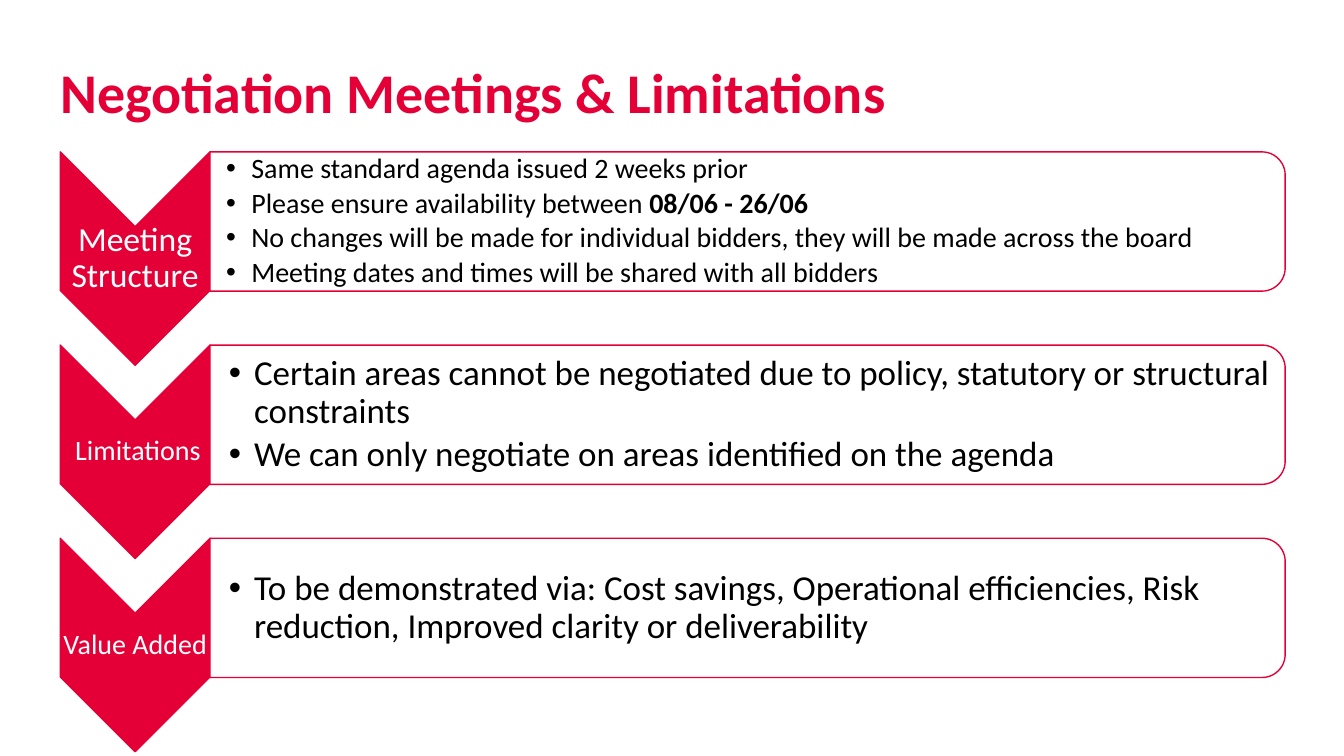
from dataclasses import dataclass

from lxml.etree import SubElement
from pptx import Presentation
from pptx.dml.color import RGBColor as RGB
from pptx.enum.shapes import MSO_SHAPE as SHAPE
from pptx.enum.text import MSO_ANCHOR as ANCHOR, MSO_AUTO_SIZE as AUTO, PP_ALIGN as ALIGN
from pptx.oxml.ns import qn
from pptx.util import Pt

PX = 6350  # EMU per px: the slide is 1920 x 1080 px


@dataclass(frozen=True)
class Theme:
    font: str = "Calibri"
    red: RGB = RGB(0xE4, 0x00, 0x37)
    white: RGB = RGB(0xFF, 0xFF, 0xFF)
    black: RGB = RGB(0, 0, 0)
    title: int = 40
    large: int = 25
    label: int = 24
    small: int = 20


THEME = Theme()

# label, label size, label left inset, list size, list left inset, list items;
# an item is a list of (text, bold) runs
ROWS = [
    ("Meeting Structure", THEME.label, 2, THEME.small, 23, [
        [("Same standard agenda issued 2 weeks prior", False)],
        [("Please ensure availability between ", False), ("08/06 - 26/06", True)],
        [("No changes will be made for individual bidders, "
          "they will be made across the board", False)],
        [("Meeting dates and times will be shared with all bidders", False)],
    ]),
    ("Limitations", THEME.small, 10, THEME.large, 27, [
        [("Certain areas cannot be negotiated due to policy, "
          "statutory or structural constraints", False)],
        [("We can only negotiate on areas identified on the agenda", False)],
    ]),
    ("Value Added", THEME.small, 2, THEME.large, 27, [
        [("To be demonstrated via: Cost savings, Operational efficiencies, "
          "Risk reduction, Improved clarity or deliverability", False)],
    ]),
]


def style_run(r, size, color, bold=False):
    r.font.name = THEME.font
    r.font.size = Pt(size)
    r.font.color.rgb = color
    r.font.bold = bold


def set_frame(tf, anchor, left, other):
    tf.word_wrap = True
    tf.auto_size = AUTO.NONE
    tf.vertical_anchor = anchor
    tf.margin_left = left * PX
    tf.margin_top = tf.margin_right = tf.margin_bottom = other * PX


def add_turned(s, kind, box, fill):
    """Add a shape turned by 90 degrees that fills the given box."""
    x, y, w, h = box
    sp = s.shapes.add_shape(kind, (2 * x + w - h) * PX // 2, (2 * y + h - w) * PX // 2,
                            h * PX, w * PX)
    sp.rotation = 90
    sp.shadow.inherit = False
    sp.fill.solid()
    sp.fill.fore_color.rgb = fill
    sp.line.color.rgb = THEME.red
    sp.line.width = Pt(1)
    return sp


def add_text(s, box, left, other):
    tf = s.shapes.add_textbox(*(v * PX for v in box)).text_frame
    set_frame(tf, ANCHOR.MIDDLE, left, other)
    return tf


def add_bullet(p):
    pPr = p._p.get_or_add_pPr()
    pPr.set("marL", str(36 * PX))
    pPr.set("indent", str(-36 * PX))
    SubElement(pPr, qn("a:buFont")).set("typeface", "Arial")
    SubElement(pPr, qn("a:buChar")).set("char", "•")


def add_title(s, box):
    title = s.shapes.title
    title.left, title.top, title.width, title.height = (v * PX for v in box)
    tf = title.text_frame
    tf.text = "Negotiation Meetings & Limitations"
    set_frame(tf, ANCHOR.TOP, 0, 0)
    p = tf.paragraphs[0]
    p.alignment = ALIGN.LEFT
    style_run(p.runs[0], THEME.title, THEME.red, True)


def add_chevron(s, box, label, size, left):
    x, y, w, h = box
    add_turned(s, SHAPE.CHEVRON, box, THEME.red)
    # The label sits between the notch and the shoulders
    tf = add_text(s, (x, y + w // 2, w, h - w), left, 2)
    tf.text = label
    p = tf.paragraphs[0]
    p.alignment = ALIGN.CENTER
    p.line_spacing = 0.9
    style_run(p.runs[0], size, THEME.white)


def add_panel(s, box, items, size, left):
    x, y, w, h = box
    sp = add_turned(s, SHAPE.ROUND_2_SAME_RECTANGLE, box, THEME.white)
    color = sp._element.spPr.find(qn("a:solidFill"))[0]
    SubElement(color, qn("a:alpha")).set("val", "90000")

    tf = add_text(s, (x, y + 10, w - 10, h - 20), left, 2)
    for i, item in enumerate(items):
        p = tf.add_paragraph() if i else tf.paragraphs[0]
        p.level = 1
        p.line_spacing = 0.9
        if i:
            p.space_before = Pt(0.15 * size)
        add_bullet(p)
        for text, bold in item:
            r = p.add_run()
            r.text = text
            style_run(r, size, THEME.black, bold)


def add_row(s, box, row):
    x, y, w, h = box
    label, label_size, label_left, size, left, items = row
    chevron_w = 214
    add_chevron(s, (x, y, chevron_w, h), label, label_size, label_left)
    add_panel(s, (x + chevron_w, y, w - chevron_w, 199), items, size, left)


def main():
    prs = Presentation()
    prs.slide_width, prs.slide_height = 1920 * PX, 1080 * PX
    s = prs.slides.add_slide(prs.slide_layouts[5])
    add_title(s, (86, 82, 1479, 177))
    for i, row in enumerate(ROWS):
        add_row(s, (86, 217 + 276 * i, 1750, 305), row)
    prs.save("out.pptx")


if __name__ == "__main__":
    main()
